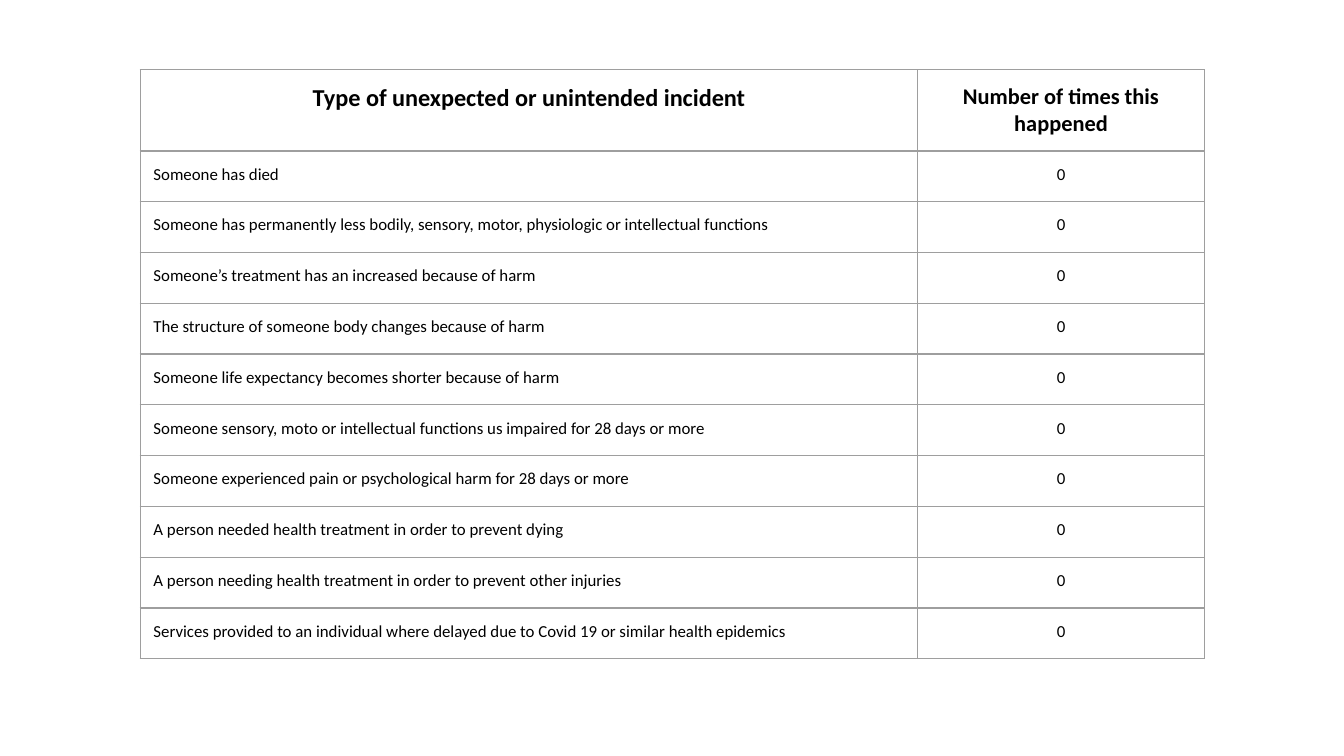
from lxml.etree import SubElement
from pptx import Presentation
from pptx.dml.color import RGBColor
from pptx.enum.text import PP_ALIGN
from pptx.oxml.ns import qn
from pptx.util import Cm, Pt

COLORS = {"text": "000000", "border": "9E9E9E", "cell": "FFFFFF"}
FONT = "Calibri"
HEADERS = [
    ("Type of unexpected or unintended incident", 13),
    ("Number of times this happened", 12),
]
INCIDENTS = [
    ("Someone has died", 0),
    ("Someone has permanently less bodily, sensory, motor, physiologic or intellectual functions", 0),
    ("Someone’s treatment has an increased because of harm", 0),
    ("The structure of someone body changes because of harm", 0),
    ("Someone life expectancy becomes shorter because of harm", 0),
    ("Someone sensory, moto or intellectual functions us impaired for 28 days or more", 0),
    ("Someone experienced pain or psychological harm for 28 days or more", 0),
    ("A person needed health treatment in order to prevent dying", 0),
    ("A person needing health treatment in order to prevent other injuries", 0),
    ("Services provided to an individual where delayed due to Covid 19 or similar health epidemics", 0),
]
COLUMN_SHARES = (0.73, 0.27)
HEADER_HEIGHT = Cm(1.07)
ROW_HEIGHT = Cm(0.96)


def add_borders(cell):
    """Draw a thin line on all four sides of a cell."""
    properties = cell._tc.get_or_add_tcPr()
    for index, side in enumerate(("a:lnL", "a:lnR", "a:lnT", "a:lnB")):
        line = properties.makeelement(qn(side), {"w": str(Pt(0.75))})
        fill = SubElement(line, qn("a:solidFill"))
        SubElement(fill, qn("a:srgbClr"), val=COLORS["border"])
        properties.insert(index, line)


def fill_cell(cell, text, size, bold=False, centred=False):
    """Write and format one table cell."""
    cell.margin_left = cell.margin_right = Cm(0.25)
    cell.margin_top = cell.margin_bottom = Cm(0.25)
    cell.fill.solid()
    cell.fill.fore_color.rgb = RGBColor.from_string(COLORS["cell"])
    add_borders(cell)
    para = cell.text_frame.paragraphs[0]
    para.text = text
    para.alignment = PP_ALIGN.CENTER if centred else PP_ALIGN.LEFT
    para.font.name = FONT
    para.font.size = Pt(size)
    para.font.bold = bold
    para.font.color.rgb = RGBColor.from_string(COLORS["text"])


def add_incident_table(page, left, top, width):
    """Place the table of incident types and counts in the given box."""
    height = HEADER_HEIGHT + ROW_HEIGHT * len(INCIDENTS)
    table = page.shapes.add_table(
        len(INCIDENTS) + 1, len(HEADERS), left, top, width, height
    ).table
    table.horz_banding = False
    for column, share in zip(table.columns, COLUMN_SHARES):
        column.width = int(width * share)
    for row in table.rows:
        row.height = ROW_HEIGHT
    table.rows[0].height = HEADER_HEIGHT
    for index, (title, size) in enumerate(HEADERS):
        fill_cell(table.cell(0, index), title, size, bold=True, centred=True)
    for index, (incident, count) in enumerate(INCIDENTS, start=1):
        fill_cell(table.cell(index, 0), incident, 9)
        fill_cell(table.cell(index, 1), str(count), 9, centred=True)


def main():
    """Build the deck with its incident page."""
    deck = Presentation()
    deck.slide_width, deck.slide_height = Cm(25.4), Cm(14.29)
    page = deck.slides.add_slide(deck.slide_layouts[6])
    add_incident_table(page, Cm(2.65), Cm(1.32), Cm(20.12))
    deck.save("out.pptx")


if __name__ == "__main__":
    main()
